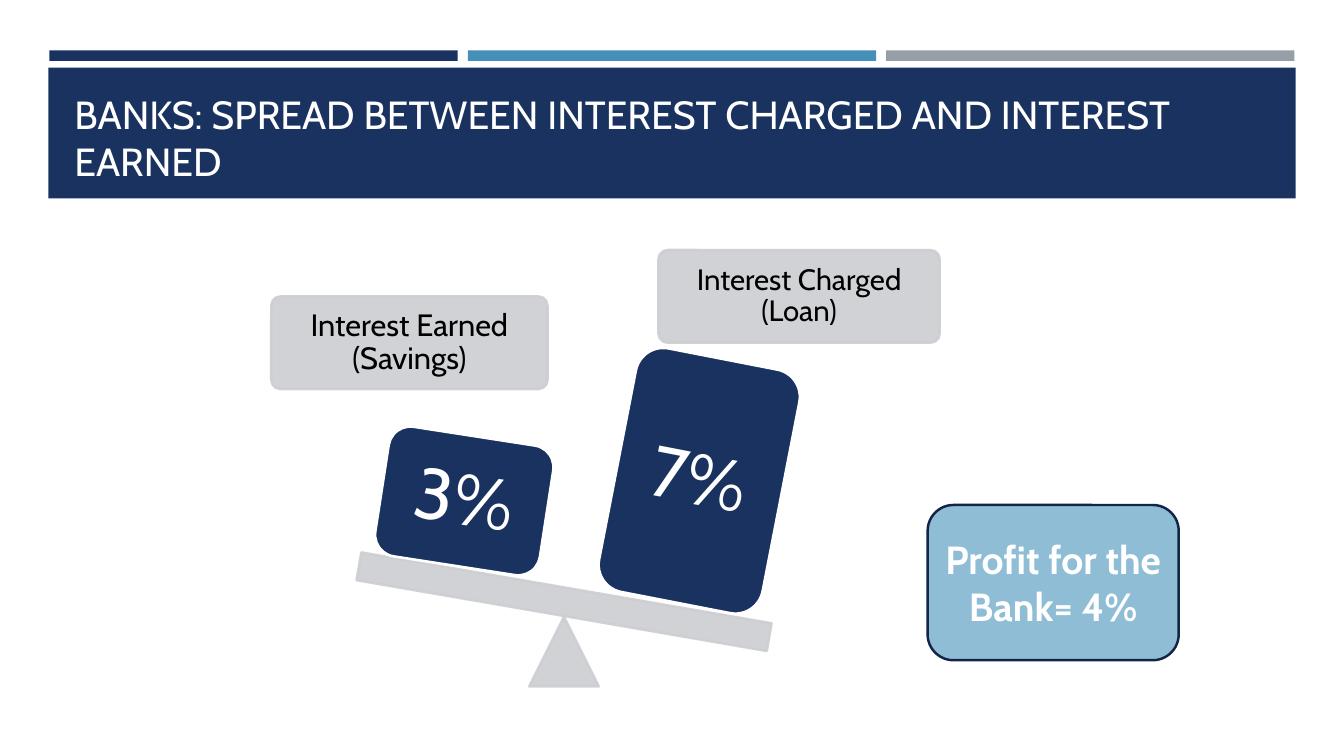
"""Build a slide that shows a bank's interest spread as a tilted balance."""
from dataclasses import dataclass

from lxml import etree
from pptx import Presentation, util as u
from pptx.dml.color import RGBColor
from pptx.enum import shapes, text
from pptx.oxml.ns import qn

TITLE = "BANKS: SPREAD BETWEEN INTEREST CHARGED AND INTEREST EARNED"
LABELS = [
    ("Interest Earned (Savings)", (20.18, 39.2, 20.56, 12.27), 22),
    ("Interest Charged (Loan)", (48.99, 33.07, 20.93, 12.27), 21),
]
WEIGHTS = [
    ("3%", (28.36, 57.6, 12.38, 17.33), 8.8),
    ("7%", (45.84, 47.2, 12.38, 32.8), 11),
]
PROFIT = ("Profit for the Bank= 4%", (69.02, 66.8, 18.68, 20.53))
PIVOT = (39.38, 81.6, 5.18, 9.2)
BEAM, BEAM_TILT = (26.48, 77.73, 30.98, 3.73), 9.8
BANNER = (3.6, 8.93, 92.8, 17.33)
TITLE_BOX = (4.8, 10.27, 90.47, 14.8)
STRIPE, STRIPE_STEP = (3.68, 6.67, 30.38, 1.4), 31.13


@dataclass(frozen=True)
class Theme:
    """Colours, font and type sizes."""
    navy: str = "1A3260"
    blue: str = "4590B8"
    gray: str = "969FA7"
    pale: str = "CDCED2"
    sky: str = "8FBDD5"
    edge: str = "132547"
    white: str = "FFFFFF"
    black: str = "000000"
    font: str = "Cabin"
    heading: int = 28
    number: int = 51
    line: float = 1.75
    opacity: int = 90


T = Theme()
KIND = shapes.MSO_SHAPE
prs = Presentation()
prs.slide_width, prs.slide_height = u.Inches(13.33), u.Inches(7.5)
s = prs.slides.add_slide(prs.slide_layouts[6])


def place(box):
    """Turn percentages of the slide into lengths."""
    sides = (prs.slide_width, prs.slide_height) * 2
    return [round(share * side / 100) for share, side in zip(box, sides)]


def add_shape(kind, box, fill, line=None, tilt=0, clear=False):
    """Add a flat preset shape, slightly see-through when clear."""
    sp = s.shapes.add_shape(kind, *place(box))
    sp.shadow.inherit = False
    sp.rotation = tilt
    sp.fill.solid()
    sp.fill.fore_color.rgb = RGBColor.from_string(fill)
    if line:
        sp.line.color.rgb = RGBColor.from_string(line)
        sp.line.width = u.Pt(T.line)
    else:
        sp.line.fill.background()
    if clear:
        for color in sp._element.spPr.iter(qn("a:srgbClr")):
            etree.SubElement(color, qn("a:alpha"), val=str(T.opacity * 1000))
    return sp


def write(sp, words, size, color, inset=None, spacing=None, bold=False,
          align=text.PP_ALIGN.CENTER, anchor=text.MSO_ANCHOR.MIDDLE):
    """Put one styled paragraph into a shape."""
    tf = sp.text_frame
    tf.text = words
    tf.word_wrap = True
    tf.vertical_anchor = anchor
    if inset is not None:
        tf.margin_left = tf.margin_right = u.Inches(inset)
        tf.margin_top = tf.margin_bottom = u.Inches(inset)
    p = tf.paragraphs[0]
    p.alignment = align
    if spacing:
        p.line_spacing = spacing
    font = p.runs[0].font
    font.name, font.size, font.bold = T.font, u.Pt(size), bold
    font.color.rgb = RGBColor.from_string(color)


def main():
    """Draw the parts from back to front and save."""
    left, top, width, height = STRIPE
    for i, color in enumerate((T.navy, T.blue, T.gray)):
        add_shape(KIND.RECTANGLE, (left + i * STRIPE_STEP, top, width, height), color)
    add_shape(KIND.RECTANGLE, BANNER, T.navy)
    write(s.shapes.add_textbox(*place(TITLE_BOX)), TITLE, T.heading, T.white,
          align=text.PP_ALIGN.LEFT, anchor=text.MSO_ANCHOR.BOTTOM)

    for words, box, size in LABELS:
        sp = add_shape(KIND.ROUNDED_RECTANGLE, box, T.pale, T.pale, clear=True)
        sp.adjustments[0] = 0.1
        write(sp, words, size, T.black, inset=0.09, spacing=0.9)
    add_shape(KIND.ISOSCELES_TRIANGLE, PIVOT, T.pale, T.pale, clear=True)
    add_shape(KIND.RECTANGLE, BEAM, T.pale, T.pale, BEAM_TILT, clear=True)
    for words, box, tilt in WEIGHTS:
        sp = add_shape(KIND.ROUNDED_RECTANGLE, box, T.navy, T.white, tilt)
        write(sp, words, T.number, T.white, inset=0.21, spacing=0.9)

    words, box = PROFIT
    sp = add_shape(KIND.ROUNDED_RECTANGLE, box, T.sky, T.edge)
    write(sp, words, T.heading, T.white, bold=True)
    prs.save("out.pptx")


if __name__ == "__main__":
    main()
